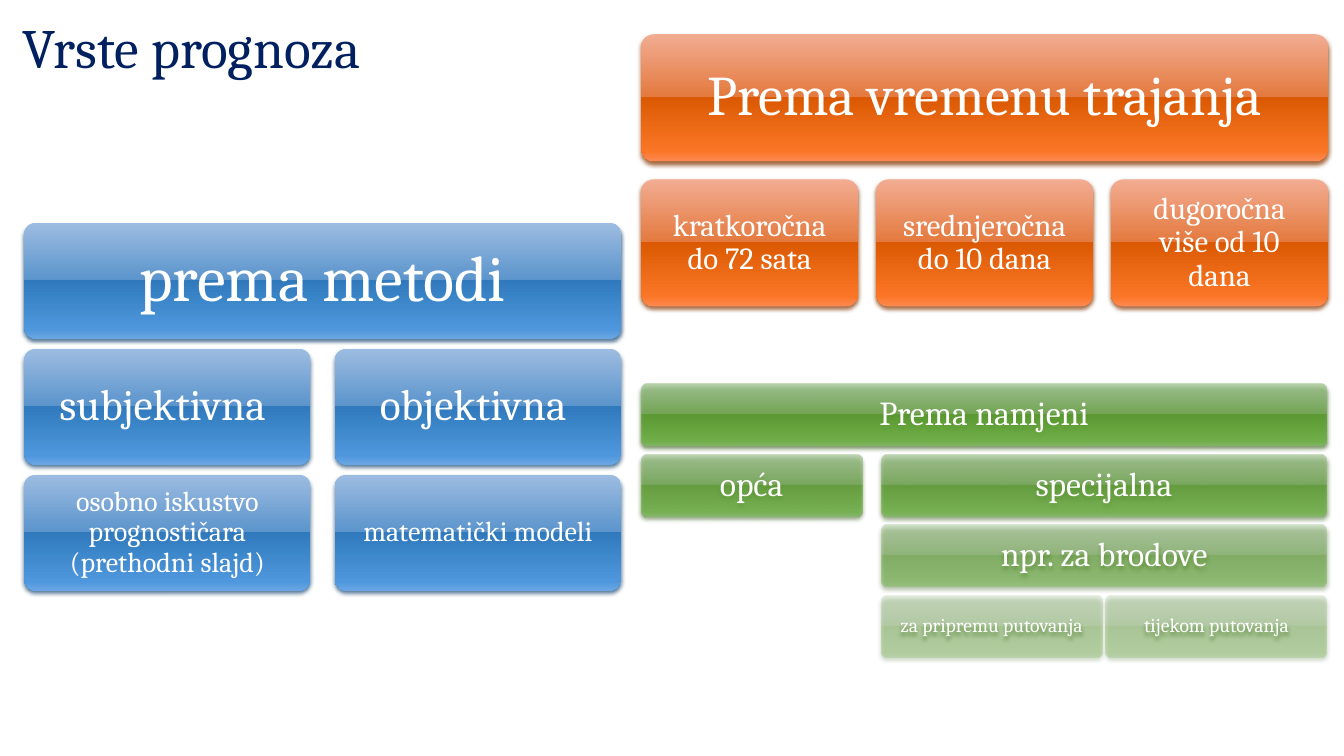
from lxml.etree import SubElement
from pptx import Presentation
from pptx.dml.color import RGBColor
from pptx.enum.shapes import MSO_SHAPE
from pptx.enum.text import MSO_ANCHOR, MSO_AUTO_SIZE, PP_ALIGN
from pptx.oxml.ns import qn
from pptx.util import Inches, Pt

NAVY = RGBColor(0x00, 0x20, 0x60)
WHITE = RGBColor(0xFF, 0xFF, 0xFF)
BLUES = [RGBColor.from_string(c) for c in ("9DBCE1", "5C95CC", "2F79BC", "4E97DC", "6BA6E4")]
ORANGES = [RGBColor.from_string(c) for c in ("F2AC92", "E47A3F", "DB5902", "FA7626", "FF8951")]
GREENS = [RGBColor.from_string(c) for c in ("A6C797", "70A84F", "539923", "6DB441", "83BF63")]
BLUE_SHADOW = RGBColor(0x38, 0x60, 0x84)
ORANGE_SHADOW = RGBColor(0x92, 0x4D, 0x1E)
GREEN_SHADOW = RGBColor(0x45, 0x6B, 0x2C)
GLOSS_STOPS = (0, 49, 49, 92, 100)

TITLE = "Vrste prognoza"

# Each row: text size, inset, opacity in percent, then (text, first column, last column)
HIERARCHIES = [
    dict(
        columns=(0.24, 3.32), width=2.84, top=2.21, height=1.15, pitch=1.25,
        gloss=BLUES, shadow=BLUE_SHADOW,
        rows=[
            (46, 0.22, 100, [("prema metodi", 0, 1)]),
            (31, 0.16, 100, [("subjektivna ", 0, 0), ("objektivna ", 1, 1)]),
            (20, 0.11, 100, [("osobno iskustvo prognostičara (prethodni slajd)", 0, 0),
                             ("matematički modeli", 1, 1)]),
        ],
    ),
    dict(
        columns=(6.36, 8.69, 11.02), width=2.15, top=0.34, height=1.26, pitch=1.44,
        gloss=ORANGES, shadow=ORANGE_SHADOW,
        rows=[
            (40, 0.21, 100, [("Prema vremenu trajanja", 0, 2)]),
            (22, 0.13, 100, [("kratkoročna do 72 sata", 0, 0),
                             ("srednjeročna do 10 dana", 1, 1),
                             ("dugoročna više od 10 dana", 2, 2)]),
        ],
    ),
    dict(
        columns=(6.36, 8.74, 10.97), width=2.19, top=3.81, height=0.61, pitch=0.7,
        gloss=GREENS, shadow=GREEN_SHADOW,
        rows=[
            (24, 0.11, 80, [("Prema namjeni", 0, 2)]),
            (24, 0.11, 70, [("opća", 0, 0), ("specijalna", 1, 2)]),
            (24, 0.11, 50, [("npr. za brodove", 1, 2)]),
            (14, 0.08, 30, [("za pripremu putovanja", 1, 1), ("tijekom putovanja", 2, 2)]),
        ],
    ),
]


def write_text(frame, text, size, color, align):
    frame.word_wrap = True
    frame.auto_size = MSO_AUTO_SIZE.NONE
    frame.vertical_anchor = MSO_ANCHOR.MIDDLE
    paragraph = frame.paragraphs[0]
    paragraph.alignment = align
    paragraph.line_spacing = 0.9
    run = paragraph.add_run()
    run.text = text
    run.font.name = "Cambria"
    run.font.size = Pt(size)
    run.font.color.rgb = color


def add_color(parent, color, opacity):
    node = SubElement(parent, qn("a:srgbClr"), val=str(color))
    if opacity < 100:
        SubElement(node, qn("a:alpha"), val=str(opacity * 1000))


def apply_gloss(box, colors, shadow, opacity):
    """Give the box a vertical gradient and a soft shadow below it."""
    box.line.fill.background()
    box.shadow.inherit = False
    properties = box.line._get_or_add_ln().getparent()

    gradient = SubElement(properties, qn("a:gradFill"), rotWithShape="1")
    stops = SubElement(gradient, qn("a:gsLst"))
    for position, color in zip(GLOSS_STOPS, colors):
        add_color(SubElement(stops, qn("a:gs"), pos=str(position * 1000)), color, opacity)
    SubElement(gradient, qn("a:lin"), ang="5400000", scaled="0")
    properties.find(qn("a:ln")).addprevious(gradient)

    outer = SubElement(properties.find(qn("a:effectLst")), qn("a:outerShdw"),
                       blurRad=str(Pt(3.1)), dist=str(Pt(2)), dir="5400000",
                       algn="ctr", rotWithShape="0")
    add_color(outer, shadow, 83)


def add_hierarchy(slide, columns, width, top, height, pitch, gloss, shadow, rows):
    for level, (size, inset, opacity, entries) in enumerate(rows):
        for text, first, last in entries:
            box = slide.shapes.add_shape(
                MSO_SHAPE.ROUNDED_RECTANGLE,
                Inches(columns[first]), Inches(top + level * pitch),
                Inches(columns[last] + width - columns[first]), Inches(height))
            box.adjustments[0] = 0.1
            apply_gloss(box, gloss, shadow, opacity)
            frame = box.text_frame
            frame.margin_left = frame.margin_right = Inches(inset)
            frame.margin_top = frame.margin_bottom = Inches(inset)
            write_text(frame, text, size=size, color=WHITE, align=PP_ALIGN.CENTER)


def main():
    presentation = Presentation()
    presentation.slide_width = Inches(13.33)
    presentation.slide_height = Inches(7.5)
    slide = presentation.slides.add_slide(presentation.slide_layouts[5])

    title = slide.shapes.title
    title.left, title.top = Inches(0.12), Inches(0.15)
    title.width, title.height = Inches(13.04), Inches(0.71)
    write_text(title.text_frame, TITLE, size=39.6, color=NAVY, align=PP_ALIGN.LEFT)

    for hierarchy in HIERARCHIES:
        add_hierarchy(slide, **hierarchy)
    presentation.save("out.pptx")


if __name__ == "__main__":
    main()
